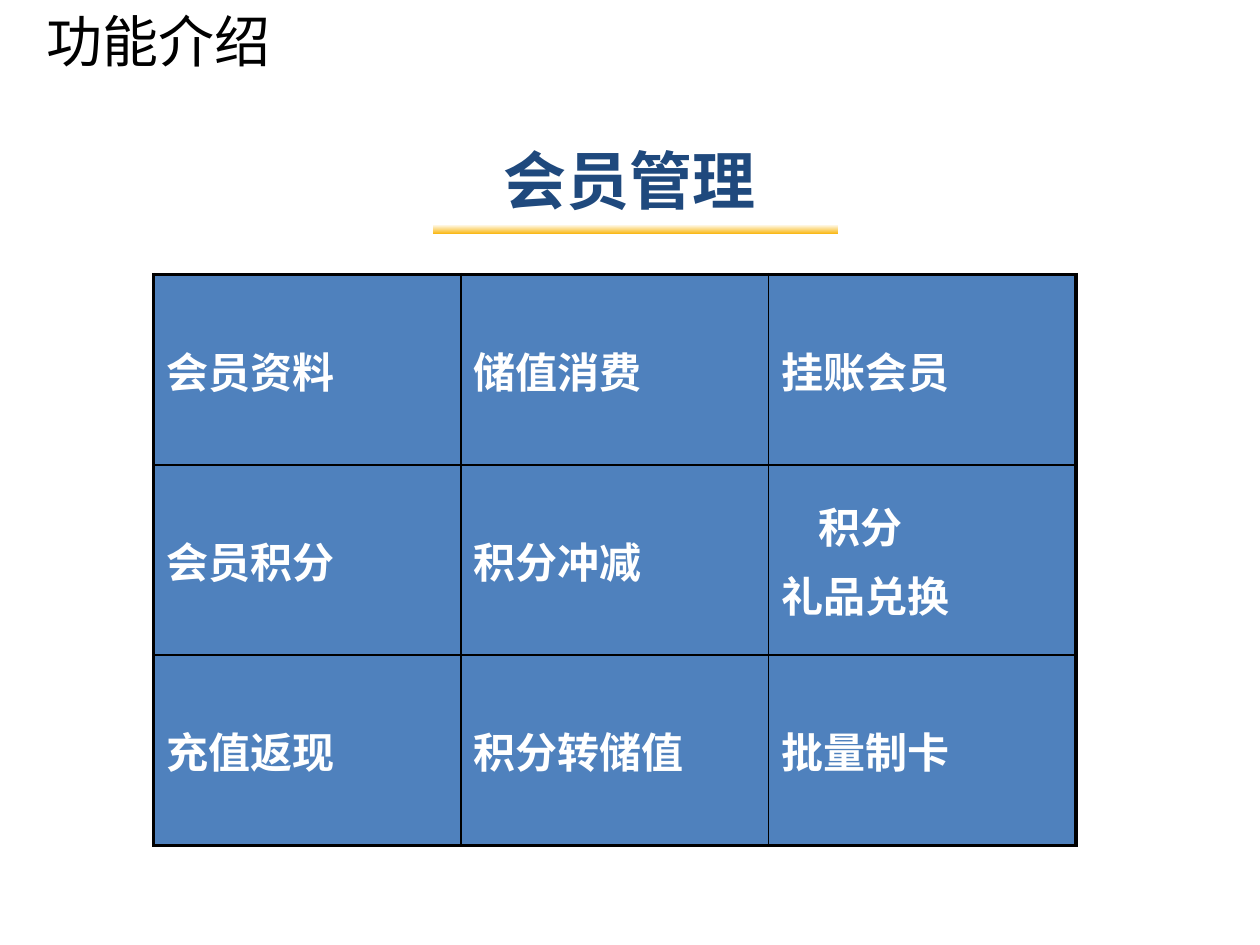
from lxml.etree import SubElement
from pptx import Presentation
from pptx.dml.color import RGBColor
from pptx.enum.shapes import MSO_SHAPE as Shape
from pptx.enum.text import MSO_ANCHOR as Anchor, MSO_AUTO_SIZE as AutoSize, PP_ALIGN as Align
from pptx.oxml.ns import qn
from pptx.util import Inches, Pt

COLORS = {"black": "000000", "white": "FFFFFF", "navy": "1F497D", "blue": "4F81BD", "gold": "F9B407"}
FEATURES = [
    ["会员资料", "储值消费", "挂账会员"],
    ["会员积分", "积分冲减", "积分\n礼品兑换"],
    ["充值返现", "积分转储值", "批量制卡"],
]
CELL_SIZE = 2.44, 1.51


def color(name):
    """Return the palette colour with this name."""
    return RGBColor.from_string(COLORS[name])


def style(paragraph, size, face, tone, bold=False):
    """Set the font of a whole paragraph."""
    font = paragraph.font
    font.size, font.name, font.bold = Pt(size), face, bold
    font.color.rgb = color(tone)


def add_title(slide, text):
    """Place the slide title in the top left corner."""
    title = slide.shapes.title
    title.left, title.top, title.width, title.height = map(Inches, (0.27, 0, 9, 0.68))
    frame = title.text_frame
    frame.text = text
    frame.auto_size, frame.vertical_anchor = AutoSize.NONE, Anchor.TOP
    frame.paragraphs[0].alignment = Align.LEFT
    style(frame.paragraphs[0], 32, "Calibri", "black")


def add_heading(slide, text):
    """Add the centred module heading."""
    frame = slide.shapes.add_textbox(*map(Inches, (0.75, 0.9, 8.5, 1.04))).text_frame
    frame.text = text
    frame.word_wrap, frame.vertical_anchor = True, Anchor.MIDDLE
    frame.paragraphs[0].alignment = Align.CENTER
    style(frame.paragraphs[0], 36, "Calibri", "navy", bold=True)


def add_underline(slide):
    """Add the bar under the heading, fading from white down to gold."""
    bar = slide.shapes.add_shape(Shape.RECTANGLE, *map(Inches, (3.43, 1.78, 3.23, 0.08)))
    bar.shadow.inherit = False
    bar.fill.gradient()
    bar.fill.gradient_angle = 270
    for stop, tone, position in zip(bar.fill.gradient_stops, ("white", "gold"), (0, 1)):
        stop.color.rgb, stop.position = color(tone), position
    bar.line.color.rgb = color("white")
    bar.line.width = Pt(0.75)


def set_borders(cell, widths):
    """Draw black borders of the given widths, ahead of the cell fill."""
    properties = cell._tc.get_or_add_tcPr()
    for index, (side, width) in enumerate(widths.items()):
        border = SubElement(properties, qn(f"a:ln{side}"), w=str(Pt(width)))
        properties.insert(index, border)
        SubElement(SubElement(border, qn("a:solidFill")), qn("a:srgbClr"), val=COLORS["black"])


def fill_cell(cell, text):
    """Write one feature name, with the first of two lines indented."""
    cell.fill.solid()
    cell.fill.fore_color.rgb = color("blue")
    cell.vertical_anchor = Anchor.MIDDLE
    cell.text = text
    lines = cell.text_frame.paragraphs
    for line in lines:
        style(line, 24, "Arial", "white", bold=True)
    if len(lines) > 1:
        lines[0]._p.get_or_add_pPr().set("marL", str(Inches(0.3)))
        lines[1].space_before = Pt(4.8)


def add_features(slide):
    """Add the feature grid with a thick frame and thin inner rules."""
    last = len(FEATURES) - 1
    width, height = (Inches(side * len(FEATURES)) for side in CELL_SIZE)
    grid = slide.shapes.add_table(last + 1, last + 1, Inches(1.22), Inches(2.18), width, height).table
    for row, names in enumerate(FEATURES):
        for column, name in enumerate(names):
            cell = grid.cell(row, column)
            fill_cell(cell, name)
            outer = {"L": column == 0, "R": column == last, "T": row == 0, "B": row == last}
            set_borders(cell, {side: 2.25 if edge else 1 for side, edge in outer.items()})


def main():
    """Build the member management slide."""
    deck = Presentation()
    deck.slide_width, deck.slide_height = Inches(10), Inches(7.5)
    slide = deck.slides.add_slide(deck.slide_layouts[5])
    add_title(slide, "功能介绍")
    add_heading(slide, "会员管理")
    add_underline(slide)
    add_features(slide)
    deck.save("out.pptx")


if __name__ == "__main__":
    main()
